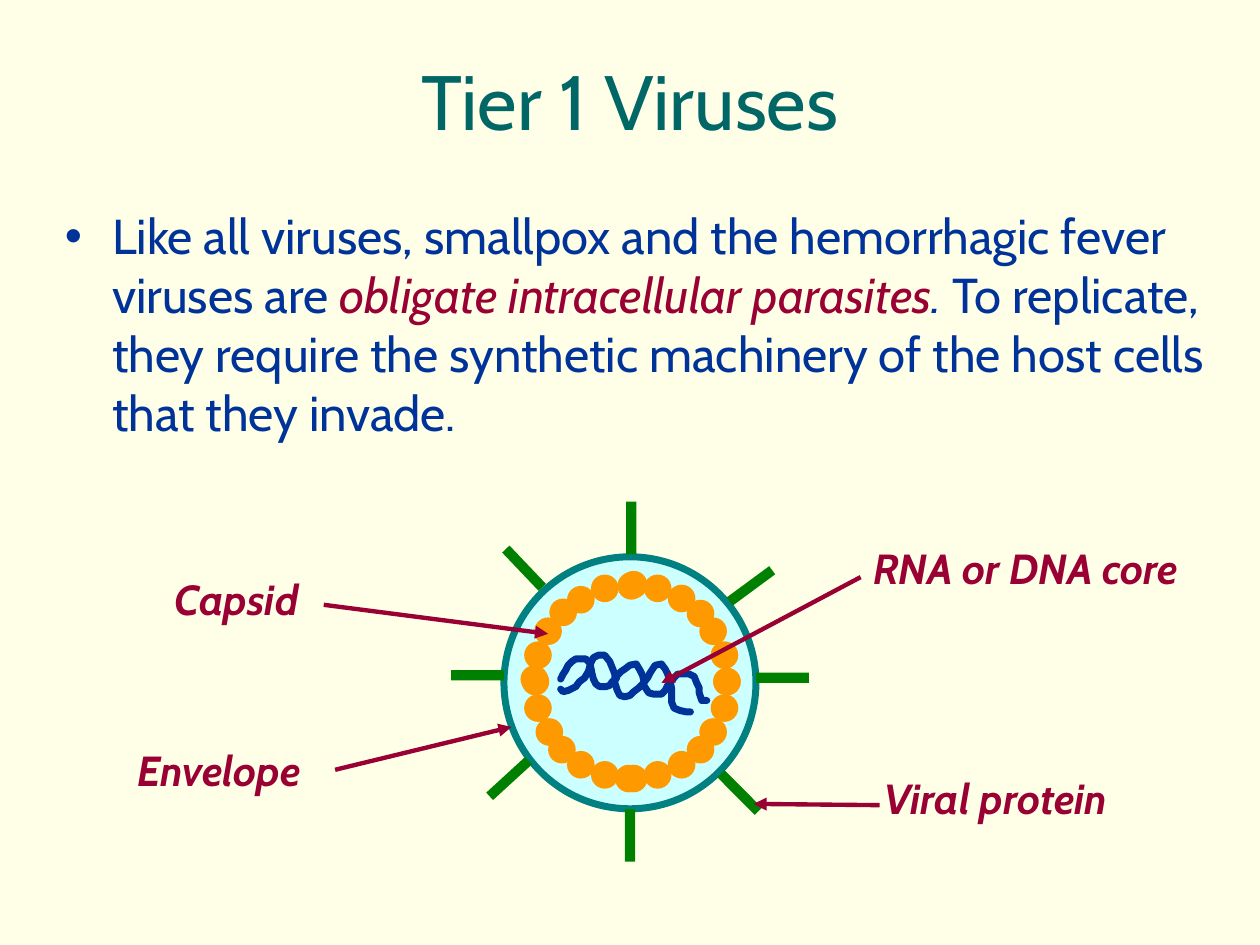
from dataclasses import dataclass

from lxml.etree import SubElement
from pptx import Presentation
from pptx.dml.color import RGBColor
from pptx.enum.shapes import MSO_CONNECTOR, MSO_SHAPE
from pptx.enum.text import MSO_ANCHOR, MSO_AUTO_SIZE, PP_ALIGN
from pptx.oxml.ns import qn
from pptx.util import Pt


@dataclass(frozen=True)
class Theme:
    font: str = "Cabin"
    paper: str = "FFFFE7"
    heading: str = "006666"
    ink: str = "003399"
    accent: str = "990033"
    envelope: str = "008080"
    interior: str = "CCFFFF"
    capsid: str = "FF9900"
    capsid_line: str = "000000"
    protein: str = "008000"
    title_size: float = 44
    body_size: float = 28
    label_size: float = 24


THEME = Theme()

CAPSID_CENTER = (360.7, 389.5)
BEAD_SIZE = 15.8
BEAD_QUADRANT = [(53.3, 15.1), (46.8, 28.8), (39.6, 38.9), (28.8, 47.5),
                 (15.1, 53.3), (1.4, 55.4), (54.7, 0)]
QUADRANT_TURNS = [
    lambda x, y: (x, y),
    lambda x, y: (-y, -x),
    lambda x, y: (x, -y),
    lambda x, y: (-x, y),
]

SPIKE_WIDTH, SPIKE_LENGTH = 5.8, 30.2
SPIKES = [
    (357.8, 286.6, 0), (296.6, 309.6, 316.4), (288, 429.8, 47.5),
    (419.8, 437.8, 315.1), (426.2, 319.7, 53.6), (270, 370.8, 90),
    (444.2, 372.2, 270), (357.1, 462.2, 0),
]

STRAND_UNIT = 0.72
STRANDS = [
    [(445, 539), (447, 535), (449, 532), (451, 528), (454, 525), (457, 523),
     (461, 523), (465, 523), (468, 526), (469, 530), (470, 535), (471, 539),
     (473, 543), (476, 545), (481, 545), (484, 544), (486, 541), (489, 539),
     (490, 536), (493, 533), (496, 531), (500, 528), (505, 527), (508, 532),
     (510, 536), (511, 540), (511, 544), (513, 547), (515, 550), (519, 551),
     (525, 551), (528, 548), (530, 544), (534, 539), (538, 535), (543, 535),
     (547, 535), (551, 537), (553, 542), (555, 546), (555, 550), (557, 556),
     (561, 556)],
    [(445, 547), (447, 549), (451, 548), (457, 545), (460, 541), (464, 538),
     (467, 533), (469, 526), (471, 522), (475, 520), (480, 520), (484, 525),
     (486, 530), (488, 535), (488, 542), (490, 548), (492, 552), (496, 553),
     (500, 552), (503, 549), (507, 546), (510, 543), (514, 538), (516, 534),
     (520, 528), (525, 527), (528, 531), (530, 535), (532, 541), (533, 546),
     (533, 557), (535, 562), (540, 564), (545, 565), (548, 565)],
]

LABELS = [
    ("RNA or DNA core", 491.8, 306.7, 201.6, (491.8, 329.8), (378, 390.2)),
    ("Envelope", 71.3, 421.9, 117.4, (191.5, 439.9), (292.3, 415.4)),
    ("Viral protein", 498.2, 437.8, 162.7, (502.6, 460.1), (430.6, 459.4)),
    ("Capsid", 92.9, 324, 90.7, (185, 345.6), (313.2, 362.2)),
]


def rgb(color):
    return RGBColor.from_string(color)


def add_run(paragraph, text, size, color, bold=False, italic=False):
    run = paragraph.add_run()
    run.text = text
    font = run.font
    font.name, font.size = THEME.font, Pt(size)
    font.bold, font.italic = bold, italic
    font.color.rgb = rgb(color)


def paint(shape, fill=None, line=None, width=0):
    shape.shadow.inherit = False
    if fill:
        shape.fill.solid()
        shape.fill.fore_color.rgb = rgb(fill)
    else:
        shape.fill.background()
    if line:
        shape.line.color.rgb = rgb(line)
        shape.line.width = Pt(width)
    else:
        shape.line.fill.background()


def add_circle(shapes, center, size, **style):
    left, top = (c - size / 2 for c in center)
    circle = shapes.add_shape(MSO_SHAPE.OVAL, Pt(left), Pt(top), Pt(size), Pt(size))
    paint(circle, **style)


def add_title(slide):
    title = slide.shapes.title
    title.left, title.top, title.width, title.height = Pt(36), Pt(12), Pt(648), Pt(90)
    frame = title.text_frame
    frame.auto_size = MSO_AUTO_SIZE.NONE
    frame.vertical_anchor = MSO_ANCHOR.MIDDLE
    paragraph = frame.paragraphs[0]
    paragraph.alignment = PP_ALIGN.CENTER
    add_run(paragraph, "Tier 1 Viruses", THEME.title_size, THEME.heading)


def add_statement(slide):
    statement = slide.shapes.add_textbox(Pt(30), Pt(114), Pt(678), Pt(210))
    frame = statement.text_frame
    frame.word_wrap = True
    paragraph = frame.paragraphs[0]
    paragraph.space_before = Pt(THEME.body_size * 0.2)
    properties = paragraph._p.get_or_add_pPr()
    properties.set("marL", str(Pt(27)))
    properties.set("indent", str(-Pt(27)))
    SubElement(properties, qn("a:buFont"), typeface="Arial")
    SubElement(properties, qn("a:buChar"), char="•")
    for text, color, italic in [
        ("Like all viruses, smallpox and the hemorrhagic fever viruses are ", THEME.ink, False),
        ("obligate intracellular parasites", THEME.accent, True),
        (".", THEME.ink, True),
        (" To replicate, they require the synthetic machinery of the host cells that they invade.",
         THEME.ink, False),
    ]:
        add_run(paragraph, text, THEME.body_size, color, italic=italic)


def add_strand(slide, points):
    builder = slide.shapes.build_freeform(*points[0], scale=Pt(STRAND_UNIT))
    builder.add_line_segments(points[1:], close=False)
    strand = builder.convert_to_shape()
    paint(strand, line=THEME.ink, width=4)
    outline = strand.line._get_or_add_ln()
    outline.set("cap", "rnd")
    SubElement(outline, qn("a:round"))


def add_capsid_quadrant(slide, turn):
    quadrant = slide.shapes.add_group_shape()
    for offset in BEAD_QUADRANT:
        center = [c + d for c, d in zip(CAPSID_CENTER, turn(*offset))]
        add_circle(quadrant.shapes, center, BEAD_SIZE, fill=THEME.capsid)


def add_spike(slide, left, top, angle):
    spike = slide.shapes.add_shape(
        MSO_SHAPE.RECTANGLE, Pt(left), Pt(top), Pt(SPIKE_WIDTH), Pt(SPIKE_LENGTH))
    spike.rotation = angle
    paint(spike, fill=THEME.protein)


def add_label(slide, text, left, top, width, start, end):
    pointer = slide.shapes.add_connector(
        MSO_CONNECTOR.STRAIGHT, *(Pt(c) for c in (*start, *end)))
    pointer.line.color.rgb = rgb(THEME.accent)
    pointer.line.width = Pt(2.5)
    SubElement(pointer.line._get_or_add_ln(), qn("a:tailEnd"), type="triangle")
    SubElement(pointer._element.spPr, qn("a:effectLst"))

    label = slide.shapes.add_textbox(Pt(left), Pt(top), Pt(width), Pt(36))
    frame = label.text_frame
    frame.word_wrap = False
    frame.auto_size = MSO_AUTO_SIZE.SHAPE_TO_FIT_TEXT
    add_run(frame.paragraphs[0], text, THEME.label_size, THEME.accent, bold=True, italic=True)


def main():
    presentation = Presentation()
    presentation.slide_width, presentation.slide_height = Pt(720), Pt(540)
    slide = presentation.slides.add_slide(presentation.slide_layouts[5])
    slide.background.fill.solid()
    slide.background.fill.fore_color.rgb = rgb(THEME.paper)

    add_title(slide)
    add_circle(slide.shapes, (360, 390.2), 144,
               fill=THEME.interior, line=THEME.envelope, width=4)
    add_statement(slide)
    add_circle(slide.shapes, (360, 390.2), 109.4, line=THEME.capsid_line, width=2)
    for points in STRANDS:
        add_strand(slide, points)
    for turn in QUADRANT_TURNS:
        add_capsid_quadrant(slide, turn)
    for spike in SPIKES:
        add_spike(slide, *spike)
    for label in LABELS:
        add_label(slide, *label)
    presentation.save("out.pptx")


if __name__ == "__main__":
    main()
